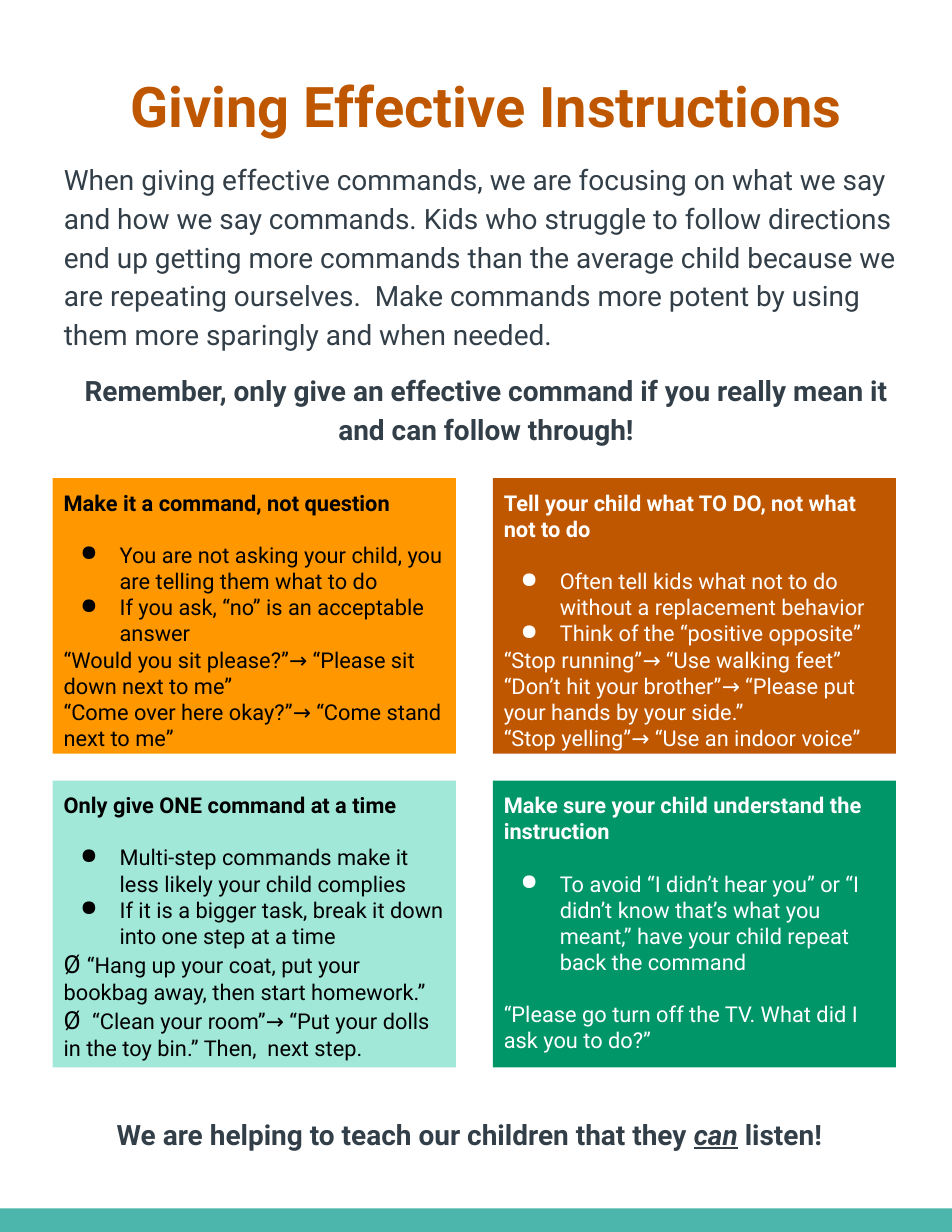
from lxml.etree import SubElement
from pptx import Presentation
from pptx.dml.color import RGBColor
from pptx.enum.shapes import MSO_SHAPE
from pptx.enum.text import MSO_ANCHOR, MSO_AUTO_SIZE, PP_ALIGN
from pptx.oxml.ns import qn
from pptx.util import Inches, Pt

FONT = "Roboto"
BLACK = RGBColor(0x00, 0x00, 0x00)
WHITE = RGBColor(0xFF, 0xFF, 0xFF)
SLATE = RGBColor(0x33, 0x3F, 0x48)
RUST = RGBColor(0xBF, 0x57, 0x00)
ORANGE = RGBColor(0xFF, 0x98, 0x00)
GREEN = RGBColor(0x00, 0x96, 0x68)
MINT = RGBColor(0xA1, 0xE8, 0xD9)
TEAL = RGBColor(0x4D, 0xB6, 0xAC)

LEFT, RIGHT, WIDTH = 0.47, 4.4, 3.6
UPPER, LOWER = (4.27, 2.46), (6.97, 2.56)
GAP = 16.8  # one line of card text, in points

# Place, colours, heading, bullets, space after bullets, examples
CARDS = [
    (LEFT, UPPER, ORANGE, BLACK, "Make it a command, not question",
     ["You are not asking your child, you are telling them what to do",
      "If you ask, “no” is an acceptable answer"], 0,
     ["“Would you sit please?”→ “Please sit down next to me”",
      "“Come over here okay?”→ “Come stand next to me”"]),
    (RIGHT, UPPER, RUST, WHITE, "Tell your child what TO DO, not what not to do",
     ["Often tell kids what not to do without a replacement behavior",
      "Think of the “positive opposite”"], 0,
     ["“Stop running”→ “Use walking feet”",
      "“Don’t hit your brother”→ “Please put your hands by your side.”",
      "“Stop yelling”→ “Use an indoor voice”"]),
    (LEFT, LOWER, MINT, BLACK, "Only give ONE command at a time",
     ["Multi-step commands make it less likely your child complies",
      "If it is a bigger task, break it down into one step at a time"], 0,
     ["Ø “Hang up your coat, put your bookbag away, then start homework.”",
      "Ø  “Clean your room”→ “Put your dolls in the toy bin.” Then,  next step."]),
    (RIGHT, LOWER, GREEN, WHITE, "Make sure your child understand the instruction",
     ["To avoid “I didn’t hear you” or “I didn’t know that’s what you meant,” "
      "have your child repeat back the command"], GAP,
     ["“Please go turn off the TV. What did I ask you to do?”"]),
]


def place(shape, left, top, width, height):
    shape.left, shape.top = Inches(left), Inches(top)
    shape.width, shape.height = Inches(width), Inches(height)


def set_frame(shape, anchor=MSO_ANCHOR.TOP):
    frame = shape.text_frame
    frame.word_wrap = True
    frame.auto_size = MSO_AUTO_SIZE.NONE
    frame.vertical_anchor = anchor
    frame.margin_left = frame.margin_right = Inches(0.1)
    frame.margin_top = frame.margin_bottom = Inches(0.1)
    return frame


def add_run(para, text, size, color, bold=False):
    run = para.add_run()
    run.text = text
    font = run.font
    font.name, font.size, font.bold = FONT, Pt(size), bold
    font.color.rgb = color
    return run


def format_para(para, align=PP_ALIGN.LEFT, after=0, spacing=1.0):
    para.alignment = align
    para.line_spacing = spacing
    para.space_before, para.space_after = Pt(0), Pt(after)


def set_bullet(para, char=None):
    """Give the paragraph a hanging bullet, or switch bullets off."""
    props = para._p.get_or_add_pPr()
    props.set("marL", str(Inches(0.5) if char else 0))
    props.set("indent", str(Inches(-0.35) if char else 0))
    if char:
        SubElement(props, qn("a:buChar")).set("char", char)
    else:
        SubElement(props, qn("a:buNone"))


def add_block(slide, left, top, width, height, color):
    block = slide.shapes.add_shape(
        MSO_SHAPE.RECTANGLE, Inches(left), Inches(top), Inches(width), Inches(height))
    block.shadow.inherit = False
    block.fill.solid()
    block.fill.fore_color.rgb = color
    block.line.fill.background()
    return block


def add_card(slide, left, row, fill, ink, head, points, after, quotes):
    frame = set_frame(add_block(slide, left, row[0], WIDTH, row[1], fill))
    para = frame.paragraphs[0]
    format_para(para, after=GAP)
    add_run(para, head, 14, ink, bold=True)
    for point in points:
        para = frame.add_paragraph()
        set_bullet(para, "●")
        format_para(para, after=after)
        add_run(para, point, 14, ink)
    for quote in quotes:
        para = frame.add_paragraph()
        format_para(para)
        if quote.startswith("Ø "):
            add_run(para, "Ø ", 16, ink)
            quote = quote[2:]
        add_run(para, quote, 14, ink)


def add_note(slide, left, top, width, height):
    """Add a centred text box and return its paragraph."""
    box = slide.shapes.add_textbox(
        Inches(left), Inches(top), Inches(width), Inches(height))
    para = set_frame(box).paragraphs[0]
    format_para(para, PP_ALIGN.CENTER, 16, 1.15)
    return para


def fill_title(slide):
    title = slide.shapes.title
    place(title, 0.77, 0.53, 7.14, 0.82)
    para = set_frame(title, MSO_ANCHOR.MIDDLE).paragraphs[0]
    format_para(para, PP_ALIGN.CENTER)
    add_run(para, "Giving Effective Instructions", 36, RUST, bold=True)


def fill_intro(slide):
    body = slide.placeholders[1]
    place(body, LEFT, 1.31, 7.74, 1.89)
    para = set_frame(body).paragraphs[0]
    set_bullet(para)
    format_para(para, spacing=1.15)
    add_run(para, "When giving effective commands, we are focusing on what we say "
            "and how we say commands. Kids who struggle to follow directions end up "
            "getting more commands than the average child because we are repeating "
            "ourselves.  Make commands more potent by using them more sparingly "
            "and when needed.", 18, SLATE)


def main():
    deck = Presentation()
    deck.slide_width, deck.slide_height = Inches(8.5), Inches(11)
    slide = deck.slides.add_slide(deck.slide_layouts[1])
    add_block(slide, 0, 10.79, 8.5, 0.21, TEAL)
    fill_title(slide)
    fill_intro(slide)
    for card in CARDS:
        add_card(slide, *card)

    para = add_note(slide, 0.54, 3.19, 7.6, 0.82)
    add_run(para, "Remember, only give an effective command if you really mean it "
            "and can follow through!", 18, SLATE, bold=True)

    para = add_note(slide, 0.47, 9.83, 7.44, 0.57)
    add_run(para, "We are helping to teach our children that they ", 18, SLATE, bold=True)
    stress = add_run(para, "can", 18, SLATE, bold=True)
    stress.font.italic = stress.font.underline = True
    add_run(para, " listen!", 18, SLATE, bold=True)
    deck.save("out.pptx")


if __name__ == "__main__":
    main()
